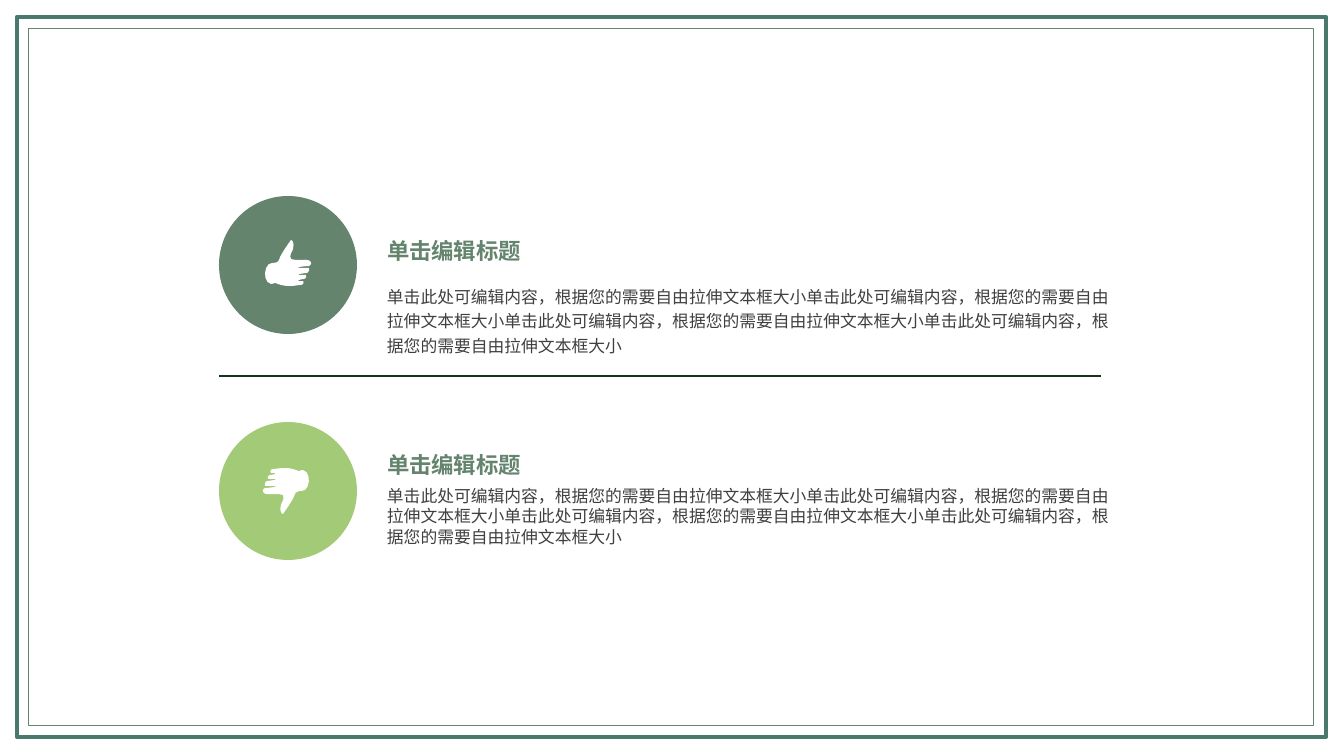
from pptx import Presentation
from pptx import util as u
from pptx.dml.color import RGBColor
from pptx.enum import shapes, text
from pptx.oxml.ns import qn
from lxml import etree

SCALE = 914400 / 100.8
COLORS = {
    "frame": "49786D", "green": "64846E", "lime": "A2CA77",
    "divider": "18341D", "body": "404040", "white": "FFFFFF",
}
HEADING = "单击编辑标题"
BODY = "，".join(["单击此处可编辑内容"] + ["根据您的需要自由拉伸文本框大小单击此处可编辑内容"] * 3
               + ["根据您的需要自由拉伸文本框大小"])
HAND_SIZE = (50, 48)
HAND_START = (37, 35)
HAND_CURVES = [
    (37, 35, 36, 34, 37, 34), (38, 34, 43, 33, 45, 33), (48, 31, 47, 29, 47, 28),
    (45, 28, 37, 28, 37, 28), (36, 27, 36, 27, 37, 27), (37, 27, 45, 26, 46, 26),
    (47, 26, 47, 26, 47, 26), (49, 25, 50, 23, 48, 21), (46, 19, 39, 20, 35, 20),
    (35, 20, 34, 20, 33, 20), (31, 19, 27, 19, 27, 19), (27, 19, 28, 19, 29, 19),
    (27, 14, 31, 11, 31, 9), (33, 1, 29, 0, 29, 0), (29, 0, 18, 15, 17, 20),
    (16, 23, 11, 23, 10, 23), (2, 23, 0, 42, 9, 44), (11, 44, 13, 42, 16, 44),
    (24, 47, 31, 46, 38, 45), (42, 45, 42, 42, 41, 41), (39, 41, 37, 41, 37, 41),
    (36, 40, 36, 40, 37, 40), (37, 40, 40, 39, 42, 39), (45, 38, 44, 36, 44, 35),
    (41, 35, 38, 35, 37, 35),
]


def px(*lengths):
    """Turn pixel lengths into EMU."""
    return [u.Emu(round(length * SCALE)) for length in lengths]


def rgb(name):
    """Look up a named colour."""
    return RGBColor.from_string(COLORS[name])


def paint(shape, fill=None, line=None, weight=1):
    """Give a shape its fill and outline, without a shadow."""
    shape.shadow.inherit = False
    for part, color in ((shape.fill, fill), (shape.line.fill, line)):
        if color:
            part.solid()
            part.fore_color.rgb = rgb(color)
        else:
            part.background()
    if line:
        shape.line.width = u.Pt(weight)


def add_frame(page, box, color, weight):
    """Draw one outline of the double page border."""
    frame = page.shapes.add_shape(shapes.MSO_SHAPE.RECTANGLE, *px(*box))
    paint(frame, line=color, weight=weight)


def add_divider(page, left, top, width):
    """Draw the rule between the two sections."""
    ends = px(left, top, left + width, top)
    divider = page.shapes.add_connector(shapes.MSO_CONNECTOR.STRAIGHT, *ends)
    divider.line.color.rgb = rgb("divider")
    divider.line.width = u.Pt(1)
    etree.SubElement(divider._element.spPr, qn("a:effectLst"))


def hand_points(steps=6):
    """Follow the curves of the hand as a list of points."""
    points = [HAND_START]
    for ax, ay, bx, by, cx, cy in HAND_CURVES:
        x, y = points[-1]
        for step in range(1, steps + 1):
            t = step / steps
            s = 1 - t
            weights = (s ** 3, 3 * s * s * t, 3 * s * t * t, t ** 3)
            points.append(tuple(sum(w * v for w, v in zip(weights, values))
                                for values in ((x, ax, bx, cx), (y, ay, by, cy))))
    return points


def add_hand(page, left, top, down):
    """Draw a thumb pointing up, or turned half round to point down."""
    points = hand_points()
    if down:
        points = [(HAND_SIZE[0] - x, HAND_SIZE[1] - y) for x, y in points]
    outline = [px(left + x, top + y) for x, y in points]
    builder = page.shapes.build_freeform(*outline[0])
    builder.add_line_segments(outline[1:], close=True)
    paint(builder.convert_to_shape(), fill="white")


def add_text(page, box, words, color, spacing=1.0, **font):
    """Place one paragraph in a box without margins."""
    frame = page.shapes.add_textbox(*px(*box)).text_frame
    settings = dict(margin_left=0, margin_top=0, margin_right=0, margin_bottom=0,
                    word_wrap=True, auto_size=text.MSO_AUTO_SIZE.SHAPE_TO_FIT_TEXT)
    for name, value in settings.items():
        setattr(frame, name, value)
    para = frame.paragraphs[0]
    para.line_spacing = spacing
    span = para.add_run()
    span.text = words
    span.font.color.rgb = rgb(color)
    for name, value in font.items():
        setattr(span.font, name, value)


def add_section(page, box, color, heading_gap, body_gap, body_height, spacing=1.0, down=False):
    """Place a thumb badge with its heading and text."""
    left, top, width, height = box
    badge = page.shapes.add_shape(shapes.MSO_SHAPE.OVAL, *px(left, top, height, height))
    paint(badge, fill=color)
    add_hand(page, left + 43, top + 44, down)
    indent = 168
    add_text(page, (left + indent, top + heading_gap, 159, 27), HEADING, "green",
             name="Arial", size=u.Pt(16), bold=True)
    add_text(page, (left + indent, top + body_gap, width - indent, body_height), BODY, "body",
             spacing, name="Calibri", size=u.Pt(12))


def main():
    """Build the slide and save the deck."""
    deck = Presentation()
    deck.slide_width, deck.slide_height = px(1344, 756)
    page = deck.slides.add_slide(deck.slide_layouts[6])
    add_frame(page, (17, 17, 1309, 720), "frame", 3)
    add_frame(page, (28, 28, 1285, 697), "green", 0.5)
    add_section(page, (219, 196, 906, 138), "green", 41, 87, 74, spacing=1.2)
    add_divider(page, 219, 376, 882)
    add_section(page, (219, 422, 906, 138), "lime", 29, 64, 61, down=True)
    deck.save("out.pptx")


if __name__ == "__main__":
    main()
